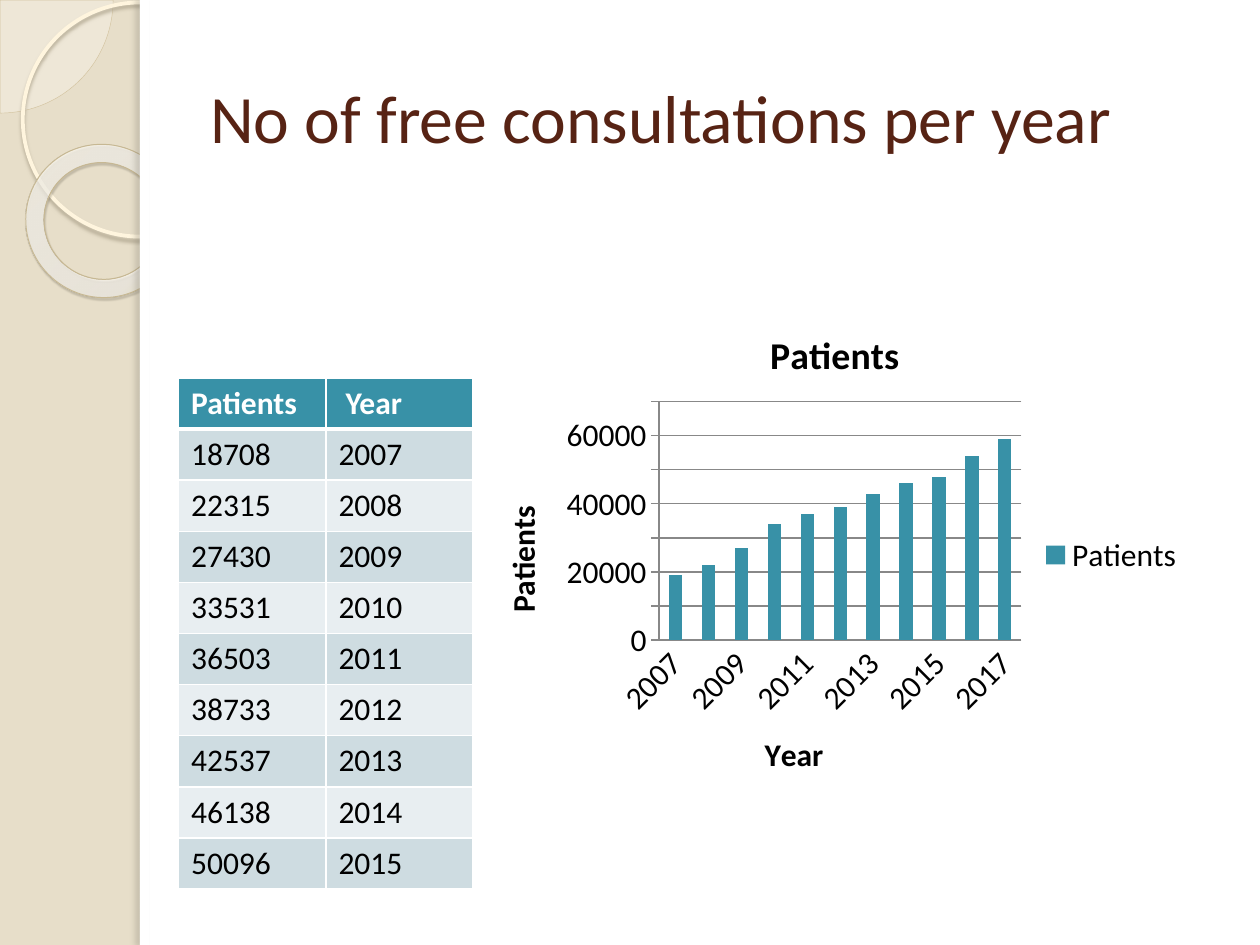
import lxml.etree
import pptx
import pptx.chart.data
import pptx.dml.color
import pptx.enum.chart
import pptx.enum.shapes
import pptx.enum.text
import pptx.oxml
import pptx.oxml.ns
import pptx.util
from pptx.dml.color import RGBColor
from pptx.util import Cm, Pt

FONT = "Calibri"
SAND = RGBColor(0xE7, 0xDE, 0xC9)
PALE = RGBColor(0xFE, 0xFA, 0xF4)
TAN = RGBColor(0xD3, 0xC3, 0x9F)
CREAM = RGBColor(0xFF, 0xF5, 0xDE)
KHAKI = RGBColor(0xC7, 0xB8, 0x93)
WHITE = RGBColor(0xFF, 0xFF, 0xFF)
BLACK = RGBColor(0, 0, 0)
GRAY = RGBColor(0x88, 0x88, 0x88)
BROWN = RGBColor(0x57, 0x23, 0x14)
TEAL = RGBColor(0x38, 0x91, 0xA7)
BANDS = [RGBColor(0xCE, 0xDC, 0xE1), RGBColor(0xE8, 0xEE, 0xF1)]
NAMESPACE = pptx.oxml.ns.nsdecls("a")


def add_decoration(kind, box, fill=None, line=None, line_width=0, shadow=None):
    """Add a shape; shadow is (colour, opacity %, blur pt, distance pt, angle)."""
    shape = slide.shapes.add_shape(kind, *[Cm(length) for length in box])
    shape.shadow.inherit = False
    if fill is None:
        shape.fill.background()
    else:
        shape.fill.solid()
        shape.fill.fore_color.rgb = fill
    if line is None:
        shape.line.fill.background()
    else:
        shape.line.color.rgb = line
        shape.line.width = Pt(line_width)
    if shadow:
        color, opacity, blur, distance, angle = shadow
        effects = shape.element.spPr.find(pptx.oxml.ns.qn("a:effectLst"))
        effects.append(pptx.oxml.parse_xml(
            f'<a:outerShdw {NAMESPACE} blurRad="{Pt(blur)}" dist="{Pt(distance)}" '
            f'dir="{angle * 60000}" algn="tl" rotWithShape="0"><a:srgbClr val="{color}">'
            f'<a:alpha val="{opacity * 1000}"/></a:srgbClr></a:outerShdw>'))
    return shape


def add_run(paragraph, text, size, color, bold=False):
    run = paragraph.add_run()
    run.text = text
    run.font.name = FONT
    run.font.size = Pt(size)
    run.font.color.rgb = color
    run.font.bold = bold


presentation = pptx.Presentation()
presentation.slide_width = Cm(25.4)
presentation.slide_height = Cm(19.05)
slide = presentation.slides.add_slide(presentation.slide_layouts[6])
slide.background.fill.solid()
slide.background.fill.fore_color.rgb = SAND

# Side decoration
kinds = pptx.enum.shapes.MSO_SHAPE
quarter = add_decoration(kinds.PIE, (-2.27, -2.27, 4.55, 4.55), PALE, TAN, 0.25)
quarter.adjustments[0] = 0
quarter.adjustments[1] = 54
quarter_color = quarter.element.spPr.find(".//" + pptx.oxml.ns.qn("a:srgbClr"))
lxml.etree.SubElement(quarter_color, pptx.oxml.ns.qn("a:alpha"), val="33000")

add_decoration(kinds.OVAL, (0.46, 0.05, 4.72, 4.72), None, CREAM, 2.15,
               ("B0A68F", 85, 2, 2, 90))

ring = add_decoration(kinds.DONUT, (0.51, 2.92, 3.12, 3.07), PALE, KHAKI, 0.58,
                      ("5A5444", 35, 1, 1.2, 75))
ring.adjustments[0] = 0.12
ring.rotation = 38.6
stops = "".join(
    f'<a:gs pos="{position * 1000}"><a:srgbClr val="{color}">'
    f'<a:alpha val="{opacity * 1000}"/></a:srgbClr></a:gs>'
    for position, color, opacity in [(0, "FFFCF6", 70), (70, "FFFEFB", 55), (100, "F0D28E", 60)])
ring_fill = ring.element.spPr.find(pptx.oxml.ns.qn("a:solidFill"))
ring.element.spPr.replace(ring_fill, pptx.oxml.parse_xml(
    f'<a:gradFill {NAMESPACE}><a:gsLst>{stops}</a:gsLst><a:path path="circle">'
    '<a:fillToRect l="-408000" t="-50000" r="508000" b="150000"/></a:path></a:gradFill>'))

add_decoration(kinds.RECTANGLE, (2.82, 0, 22.58, 19.05), WHITE)
add_decoration(kinds.RECTANGLE, (2.82, 0, 0.2, 19.05), WHITE,
               shadow=("736F63", 25, 3, 3, 180))

# Title
title = slide.shapes.add_textbox(Cm(3.99), Cm(0.76), Cm(20.83), Cm(3.18)).text_frame
title.word_wrap = True
title.vertical_anchor = pptx.enum.text.MSO_ANCHOR.MIDDLE
add_run(title.paragraphs[0], "No of free consultations per year", 38.7, BROWN)

# Table
rows = [("Patients", " Year")] + [
    (str(patients), str(year)) for year, patients in enumerate(
        [18708, 22315, 27430, 33531, 36503, 38733, 42537, 46138, 50096], start=2007)]
row_height = Cm(1.03)
table = slide.shapes.add_table(
    len(rows), 2, Cm(3.6), Cm(7.62), Cm(5.94), row_height * len(rows)).table
for row_index, texts in enumerate(rows):
    header = row_index == 0
    table.rows[row_index].height = row_height
    for column_index, text in enumerate(texts):
        cell = table.cell(row_index, column_index)
        add_run(cell.text_frame.paragraphs[0], text, 18, WHITE if header else BLACK, header)
        properties = cell._tc.get_or_add_tcPr()
        for side in ("lnL", "lnR", "lnT", "lnB"):
            thick = (header and side == "lnB") or (row_index == 1 and side == "lnT")
            properties.append(pptx.oxml.parse_xml(
                f'<a:{side} {NAMESPACE} w="{Pt(3 if thick else 1)}"><a:solidFill>'
                f'<a:srgbClr val="{WHITE}"/></a:solidFill></a:{side}>'))
        cell.fill.solid()
        cell.fill.fore_color.rgb = TEAL if header else BANDS[(row_index - 1) % 2]

# Chart
chart_data = pptx.chart.data.CategoryChartData()
chart_data.categories = [str(year) for year in range(2007, 2018)]
chart_data.add_series("Patients", [19000, 22000, 27000, 34000, 37000, 39000,
                                   43000, 46000, 48000, 54000, 59000])
chart = slide.shapes.add_chart(
    pptx.enum.chart.XL_CHART_TYPE.COLUMN_CLUSTERED,
    Cm(9.53), Cm(6.15), Cm(14.6), Cm(10.08), chart_data).chart
chart.font.name = FONT
chart.font.size = Pt(18)
chart.font.color.rgb = BLACK
plot = chart.plots[0]
plot.gap_width = 150
plot.vary_by_categories = False
plot.series[0].format.fill.solid()
plot.series[0].format.fill.fore_color.rgb = TEAL

chart.has_legend = True
chart.legend.position = pptx.enum.chart.XL_LEGEND_POSITION.RIGHT
chart.legend.include_in_layout = False

category_axis = chart.category_axis
value_axis = chart.value_axis
for holder, text, size in [(chart, "Patients", 21.6), (category_axis, "Year", 18),
                           (value_axis, "Patients", 18)]:
    holder.has_title = True
    heading = holder.chart_title if holder is chart else holder.axis_title
    add_run(heading.text_frame.paragraphs[0], text, size, BLACK, True)
for axis in (category_axis, value_axis):
    axis.format.line.color.rgb = GRAY
category_axis.major_tick_mark = pptx.enum.chart.XL_TICK_MARK.NONE
value_axis.major_tick_mark = pptx.enum.chart.XL_TICK_MARK.CROSS
value_axis.minimum_scale = 0
value_axis.maximum_scale = 70000
value_axis.major_unit = 10000
value_axis.has_major_gridlines = True
value_axis.major_gridlines.format.line.color.rgb = GRAY

presentation.save("out.pptx")
